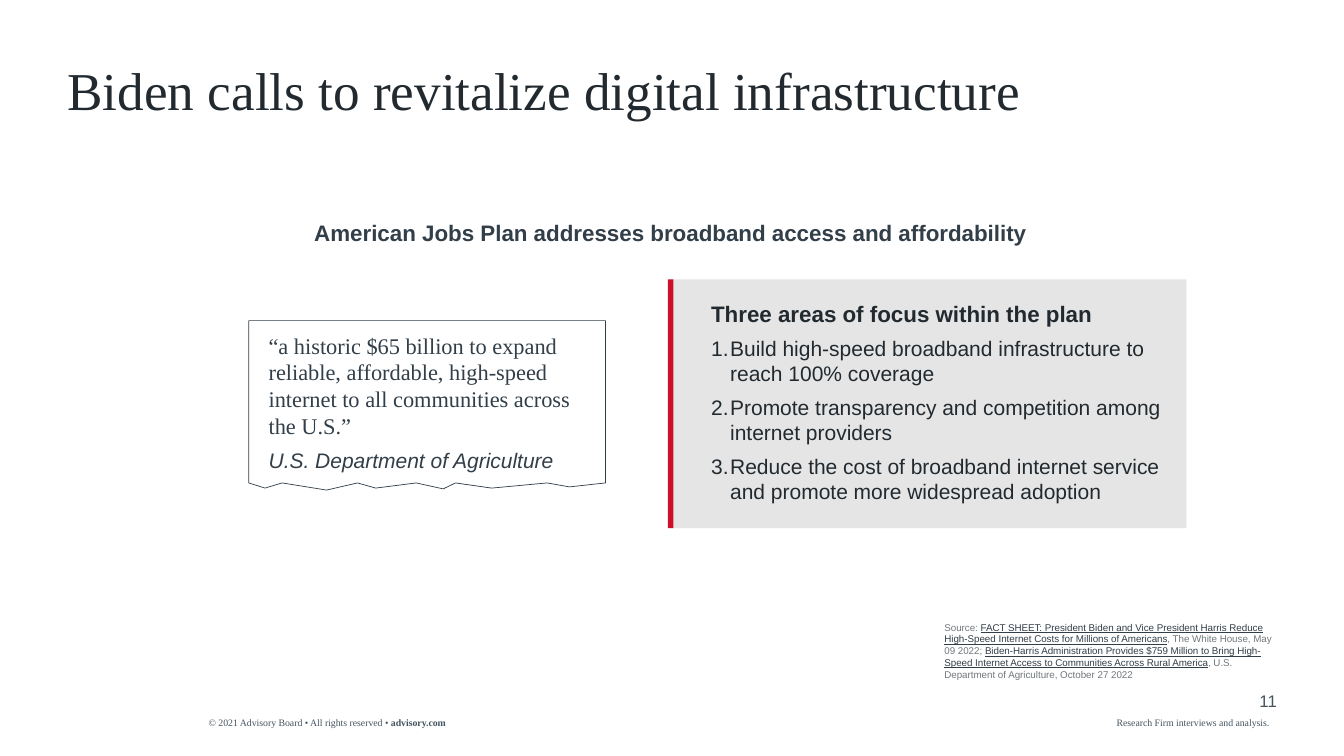
from lxml import etree
from pptx import Presentation
from pptx.dml.color import RGBColor
from pptx.enum.shapes import MSO_SHAPE
from pptx.enum.text import MSO_ANCHOR, MSO_AUTO_SIZE, PP_ALIGN
from pptx.oxml.ns import qn
from pptx.util import Cm, Pt

RECTANGLE = MSO_SHAPE.RECTANGLE
TOP, BOTTOM = MSO_ANCHOR.TOP, MSO_ANCHOR.BOTTOM
LEFT, RIGHT = PP_ALIGN.LEFT, PP_ALIGN.RIGHT
NO_AUTOFIT = MSO_AUTO_SIZE.NONE

SANS, SERIF = "Arial", "Times New Roman"
INK, SLATE, STEEL, GREY = "222A30", "323E48", "445460", "70787E"
PANEL, RED, WHITE = "E5E5E5", "CE0E2D", "FFFFFF"

TORN_EDGE = [(8.99, 4.09), (8.08, 4.19), (7.52, 4.09), (6.12, 4.22),
             (5.21, 4.09), (4.9, 4.24), (4.22, 4.09), (3.2, 4.22),
             (2.74, 4.09), (1.96, 4.27), (0.84, 4.09), (0.41, 4.22), (0, 4.09)]
FOCUS_AREAS = [
    "Build high-speed broadband infrastructure to reach 100% coverage",
    "Promote transparency and competition among internet providers",
    "Reduce the cost of broadband internet service and promote more widespread adoption",
]
SOURCES = [
    ("Source: ", False),
    ("FACT SHEET: President Biden and Vice President Harris Reduce High-Speed "
     "Internet Costs for Millions of Americans", True),
    (", The White House, May 09 2022; ", False),
    ("Biden-Harris Administration Provides $759 Million to Bring High-Speed "
     "Internet Access to Communities Across Rural America", True),
    (", U.S. Department of Agriculture, October 27 2022", False),
]


def rgb(value):
    """Turn a hex string into a colour."""
    return RGBColor.from_string(value)


def place(sp, box):
    """Move a shape to a box given in centimetres."""
    sp.left, sp.top, sp.width, sp.height = (Cm(v) for v in box)


def set_frame(sp, insets=(0, 0, 0, 0), anchor=TOP):
    """Prepare the text frame of a shape and return it."""
    tf = sp.text_frame
    tf.word_wrap = True
    tf.auto_size = NO_AUTOFIT
    tf.vertical_anchor = anchor
    tf.margin_left, tf.margin_top, tf.margin_right, tf.margin_bottom = (
        Cm(v) for v in insets)
    return tf


def add_box(s, box, insets=(0, 0, 0, 0), anchor=TOP):
    """Add a text box and return its text frame."""
    return set_frame(s.shapes.add_textbox(*(Cm(v) for v in box)), insets, anchor)


def add_run(p, text, size, color, font=SANS, bold=False, italic=False, underline=False):
    """Add one formatted run to a paragraph."""
    r = p.add_run()
    r.text = text
    r.font.name, r.font.size = font, Pt(size)
    r.font.bold, r.font.italic, r.font.underline = bold, italic, underline
    r.font.color.rgb = rgb(color)


def set_bullet(p, indent=0.0, numbered=False):
    """Give a paragraph a hanging number or no bullet at all."""
    pPr = p._p.get_or_add_pPr()
    pPr.set("marL", str(Cm(indent)))
    pPr.set("indent", str(-Cm(indent)))
    if numbered:
        etree.SubElement(pPr, qn("a:buFont")).set("typeface", SANS)
        etree.SubElement(pPr, qn("a:buAutoNum")).set("type", "arabicPeriod")
    else:
        etree.SubElement(pPr, qn("a:buNone"))


def add_heading(s, box):
    """Fill the title placeholder and the subtitle below it."""
    title = s.shapes.title
    place(title, box)
    p = set_frame(title).paragraphs[0]
    p.alignment, p.line_spacing = LEFT, 0.9
    add_run(p, "Biden calls to revitalize digital infrastructure", 38, INK, SERIF)
    x, y = box[:2]
    p = add_box(s, (x + 6.22, y + 3.88, 18.6, 0.69)).paragraphs[0]
    add_run(p, "American Jobs Plan addresses broadband access and affordability",
            16, SLATE, bold=True)


def add_quote(s, box):
    """Draw the torn note with the quotation on it."""
    x, y, w, h = box
    builder = s.shapes.build_freeform(Cm(x), Cm(y), scale=1.0)
    corners = [(w, 0)] + TORN_EDGE
    builder.add_line_segments([(Cm(x + dx), Cm(y + dy)) for dx, dy in corners], close=True)
    sp = builder.convert_to_shape()
    sp.shadow.inherit = False
    sp.fill.solid()
    sp.fill.fore_color.rgb = rgb(WHITE)
    sp.line.color.rgb = rgb(SLATE)
    sp.line.width = Pt(0.5)
    tf = add_box(s, (x + 0.25, y + 0.15, w - 0.25, h), (0.25, 0.13, 0.25, 0.13))
    add_run(tf.paragraphs[0], "“a historic $65 billion to expand reliable, affordable, "
            "high-speed internet to all communities across the U.S.”", 16, SLATE, SERIF)
    p = tf.add_paragraph()
    p.space_before = Pt(6)
    add_run(p, "U.S. Department of Agriculture", 15, SLATE, italic=True)


def add_focus_panel(s, box):
    """Fill the body placeholder as a grey panel with a red left edge."""
    x, y, _, h = box
    body = s.placeholders[1]
    place(body, box)
    body.fill.solid()
    body.fill.fore_color.rgb = rgb(PANEL)
    tf = set_frame(body, (1.02, 0.53, 0.53, 0.53))
    p = tf.paragraphs[0]
    set_bullet(p)
    p.space_before = Pt(0)
    add_run(p, "Three areas of focus within the plan", 16, INK, bold=True)
    for area in FOCUS_AREAS:
        p = tf.add_paragraph()
        set_bullet(p, 0.48, numbered=True)
        p.space_before = Pt(6)
        add_run(p, area, 15, INK)
    bar = s.shapes.add_shape(RECTANGLE, Cm(x - 0.07), Cm(y), Cm(0.14), Cm(h))
    bar.shadow.inherit = False
    bar.fill.solid()
    bar.fill.fore_color.rgb = rgb(RED)
    bar.line.fill.background()


def add_sources(s, box):
    """Write the source note from the bottom of its box."""
    p = add_box(s, box, anchor=BOTTOM).paragraphs[0]
    for text, cited in SOURCES:
        add_run(p, text, 7, SLATE if cited else GREY, underline=cited)


def add_footer(s, box):
    """Write the copyright line, the credit and the page number."""
    x, y, w, h = box
    p = add_box(s, (x, y, 8.28, h)).paragraphs[0]
    add_run(p, "© 2021 Advisory Board • All rights reserved • ", 7, STEEL, SERIF)
    add_run(p, "advisory.com", 7, STEEL, SERIF, bold=True)
    p = add_box(s, (x + w - 4.04, y, 4.04, h)).paragraphs[0]
    add_run(p, "Research Firm interviews and analysis.", 7, STEEL, SERIF)
    p = add_box(s, (x + w - 1.27, y - 0.66, 1.27, 0.51)).paragraphs[0]
    p.alignment = RIGHT
    add_run(p, "11", 12, STEEL)


def main():
    """Build the slide and save it."""
    prs = Presentation()
    prs.slide_width, prs.slide_height = Cm(33.87), Cm(19.05)
    s = prs.slides.add_slide(prs.slide_layouts[1])
    add_heading(s, (1.7, 1.63, 30.48, 1.5))
    add_quote(s, (6.27, 8.08, 8.99, 4.27))
    add_focus_panel(s, (16.9, 7.04, 13, 6.27))
    add_sources(s, (23.8, 15.34, 8.36, 1.8))
    add_footer(s, (5.26, 18.06, 26.92, 0.3))
    prs.save("out.pptx")


if __name__ == "__main__":
    main()
